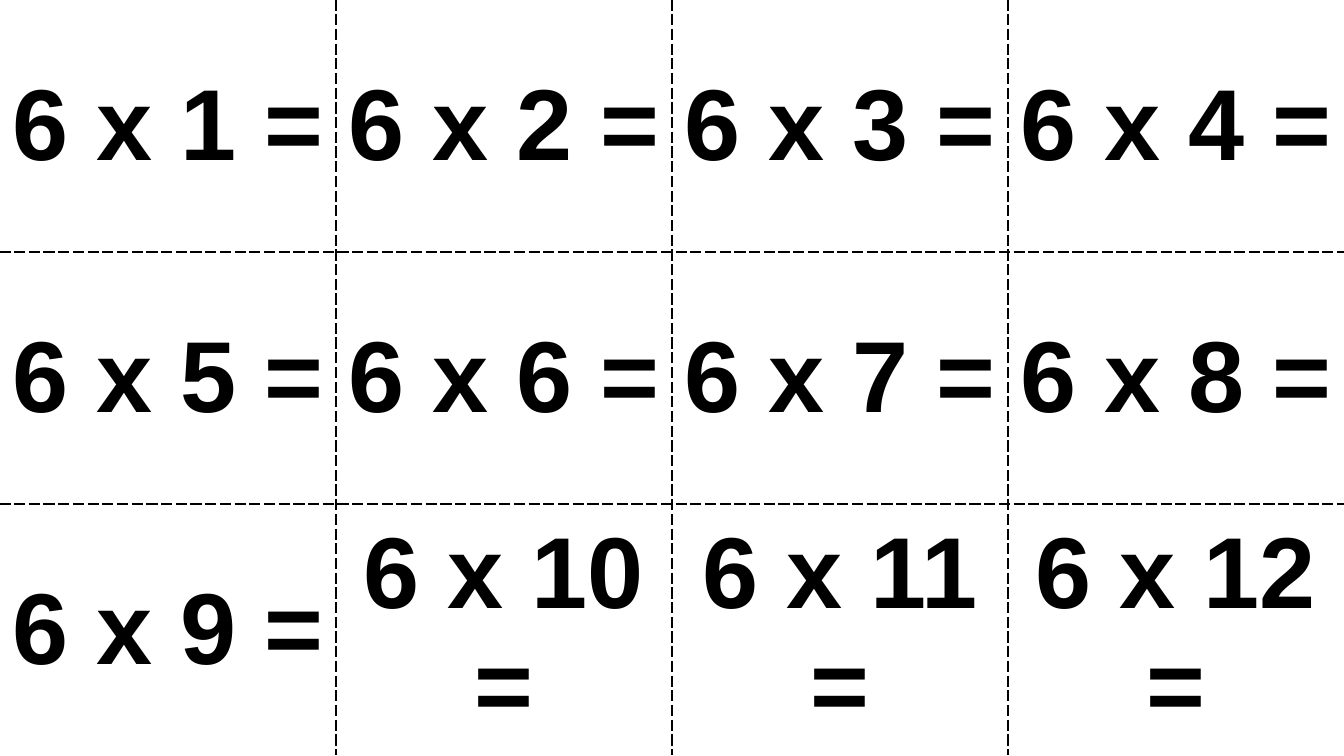
from dataclasses import dataclass

from lxml import etree
from pptx import Presentation
from pptx.dml.color import RGBColor
from pptx.enum.text import MSO_ANCHOR, PP_ALIGN
from pptx.oxml.ns import qn
from pptx.table import _Cell
from pptx.util import Cm, Pt

BLACK = RGBColor(0, 0, 0)
WHITE = RGBColor(255, 255, 255)
CENTER = PP_ALIGN.CENTER
MIDDLE = MSO_ANCHOR.MIDDLE

WIDTH, HEIGHT = Cm(33.87), Cm(19.05)
ROWS, COLS = 3, 4
FACTOR = 6


@dataclass(frozen=True)
class Edge:
    color: RGBColor
    dash: str


CUT = Edge(BLACK, "dash")
RIM = Edge(WHITE, "solid")


@dataclass(frozen=True)
class Card:
    row: int
    col: int

    @property
    def text(self) -> str:
        return f"{FACTOR} x {self.row * COLS + self.col + 1} ="

    @property
    def edges(self) -> dict[str, Edge]:
        """Cut lines between cards, white rims along the slide's edges."""
        outer = {
            "a:lnL": self.col == 0,
            "a:lnR": self.col == COLS - 1,
            "a:lnT": self.row == 0,
            "a:lnB": self.row == ROWS - 1,
        }
        return {tag: RIM if rim else CUT for tag, rim in outer.items()}


def add_edge(cell: _Cell, tag: str, edge: Edge) -> None:
    props = cell._tc.get_or_add_tcPr()
    line = etree.SubElement(props, qn(tag), w=str(Pt(1)))
    fill = etree.SubElement(line, qn("a:solidFill"))
    etree.SubElement(fill, qn("a:srgbClr"), val=str(edge.color))
    etree.SubElement(line, qn("a:prstDash"), val=edge.dash)


def draw_card(cell: _Cell, card: Card) -> None:
    for tag, edge in card.edges.items():
        add_edge(cell, tag, edge)
    cell.fill.solid()
    cell.fill.fore_color.rgb = WHITE
    cell.vertical_anchor = MIDDLE
    cell.text_frame.text = card.text
    para = cell.text_frame.paragraphs[0]
    para.alignment = CENTER
    font = para.runs[0].font
    font.name = "Arial"
    font.size = Pt(72)
    font.bold = True
    font.color.rgb = BLACK


def main() -> None:
    deck = Presentation()
    deck.slide_width, deck.slide_height = WIDTH, HEIGHT
    slide = deck.slides.add_slide(deck.slide_layouts[6])
    table = slide.shapes.add_table(ROWS, COLS, 0, 0, WIDTH, HEIGHT).table
    table.first_row = False
    table.horz_banding = False
    for row in range(ROWS):
        for col in range(COLS):
            draw_card(table.cell(row, col), Card(row, col))
    deck.save("out.pptx")


if __name__ == "__main__":
    main()
